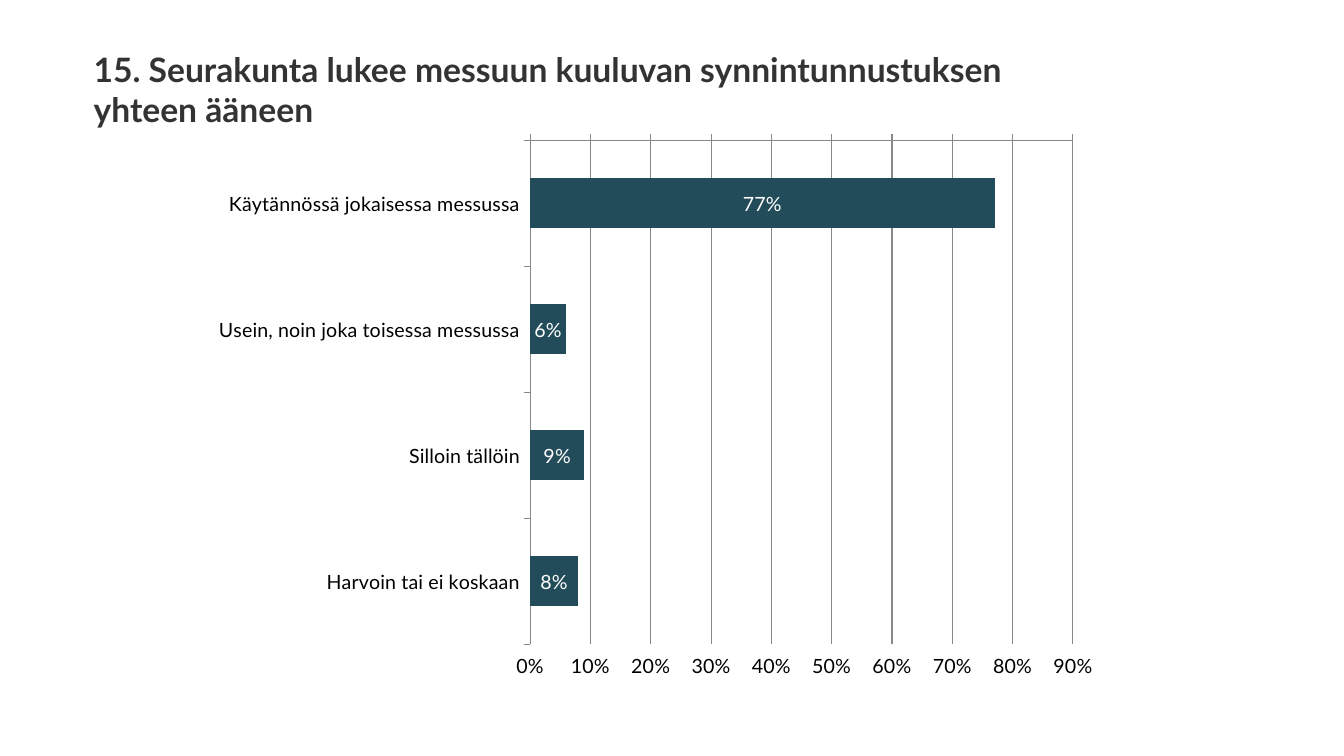
from dataclasses import dataclass

import pptx
import pptx.chart.data
import pptx.dml.color
import pptx.enum.chart
import pptx.enum.text
import pptx.util

Pt = pptx.util.Pt
FACE = "Lato"
INK = "333333"
BLACK = "000000"
WHITE = "FFFFFF"
TEAL = "234C5A"
GREY = "888888"


@dataclass
class Answer:
    text: str
    share: float


ANSWERS = [
    Answer("Käytännössä jokaisessa messussa", 0.77),
    Answer("Usein, noin joka toisessa messussa", 0.06),
    Answer("Silloin tällöin", 0.09),
    Answer("Harvoin tai ei koskaan", 0.08),
]


def color(code: str) -> pptx.dml.color.RGBColor:
    return pptx.dml.color.RGBColor.from_string(code)


def style(font, size: float, code: str, bold: bool = False) -> None:
    font.name = FACE
    font.size = Pt(size)
    font.bold = bold
    font.color.rgb = color(code)


def rule(line) -> None:
    line.color.rgb = color(GREY)
    line.width = Pt(0.75)


def add_title(slide, text: str) -> None:
    box = slide.shapes.add_textbox(Pt(59.76), Pt(30.96), Pt(740.88), Pt(65.52))
    frame = box.text_frame
    frame.word_wrap = True
    frame.vertical_anchor = pptx.enum.text.MSO_ANCHOR.MIDDLE
    frame.text = text
    style(frame.paragraphs[0].runs[0].font, 24, INK, True)


def add_bars(slide, answers: list[Answer]) -> None:
    enum = pptx.enum.chart
    data = pptx.chart.data.CategoryChartData(number_format="0%")
    data.categories = [answer.text for answer in answers]
    data.add_series("Series 1", [answer.share for answer in answers])
    chart = slide.shapes.add_chart(
        enum.XL_CHART_TYPE.BAR_CLUSTERED,
        Pt(143.28), Pt(92.16), Pt(650.16), Pt(400.32), data,
    ).chart
    chart.has_legend = False
    chart.has_title = False
    style(chart.font, 14, BLACK)

    # Bars and their labels
    plot = chart.plots[0]
    plot.gap_width = 150
    plot.vary_by_categories = False
    fill = plot.series[0].format.fill
    fill.solid()
    fill.fore_color.rgb = color(TEAL)
    plot.has_data_labels = True
    labels = plot.data_labels
    labels.show_value = True
    labels.number_format = "0%"
    labels.number_format_is_linked = False
    labels.position = enum.XL_LABEL_POSITION.CENTER
    style(labels.font, 14, WHITE)

    # Axes: first answer on top, percentages at the bottom
    place = enum.XL_TICK_LABEL_POSITION
    cats, vals = chart.category_axis, chart.value_axis
    cats.reverse_order = True
    for axis, side in ((cats, place.LOW), (vals, place.HIGH)):
        axis.tick_label_position = side
        axis.major_tick_mark = enum.XL_TICK_MARK.OUTSIDE
        axis.minor_tick_mark = enum.XL_TICK_MARK.NONE
        rule(axis.format.line)
        style(axis.tick_labels.font, 14, BLACK)
    cats.has_major_gridlines = False
    vals.has_major_gridlines = True
    rule(vals.major_gridlines.format.line)
    vals.minimum_scale = 0
    vals.maximum_scale = 0.9
    vals.major_unit = 0.1
    vals.tick_labels.number_format = "0%"
    vals.tick_labels.number_format_is_linked = False


def main() -> None:
    deck = pptx.Presentation()
    deck.slide_width, deck.slide_height = Pt(960), Pt(540)
    slide = deck.slides.add_slide(deck.slide_layouts[6])
    add_title(
        slide,
        "15. Seurakunta lukee messuun kuuluvan synnintunnustuksen yhteen ääneen",
    )
    add_bars(slide, ANSWERS)
    deck.save("out.pptx")


if __name__ == "__main__":
    main()
